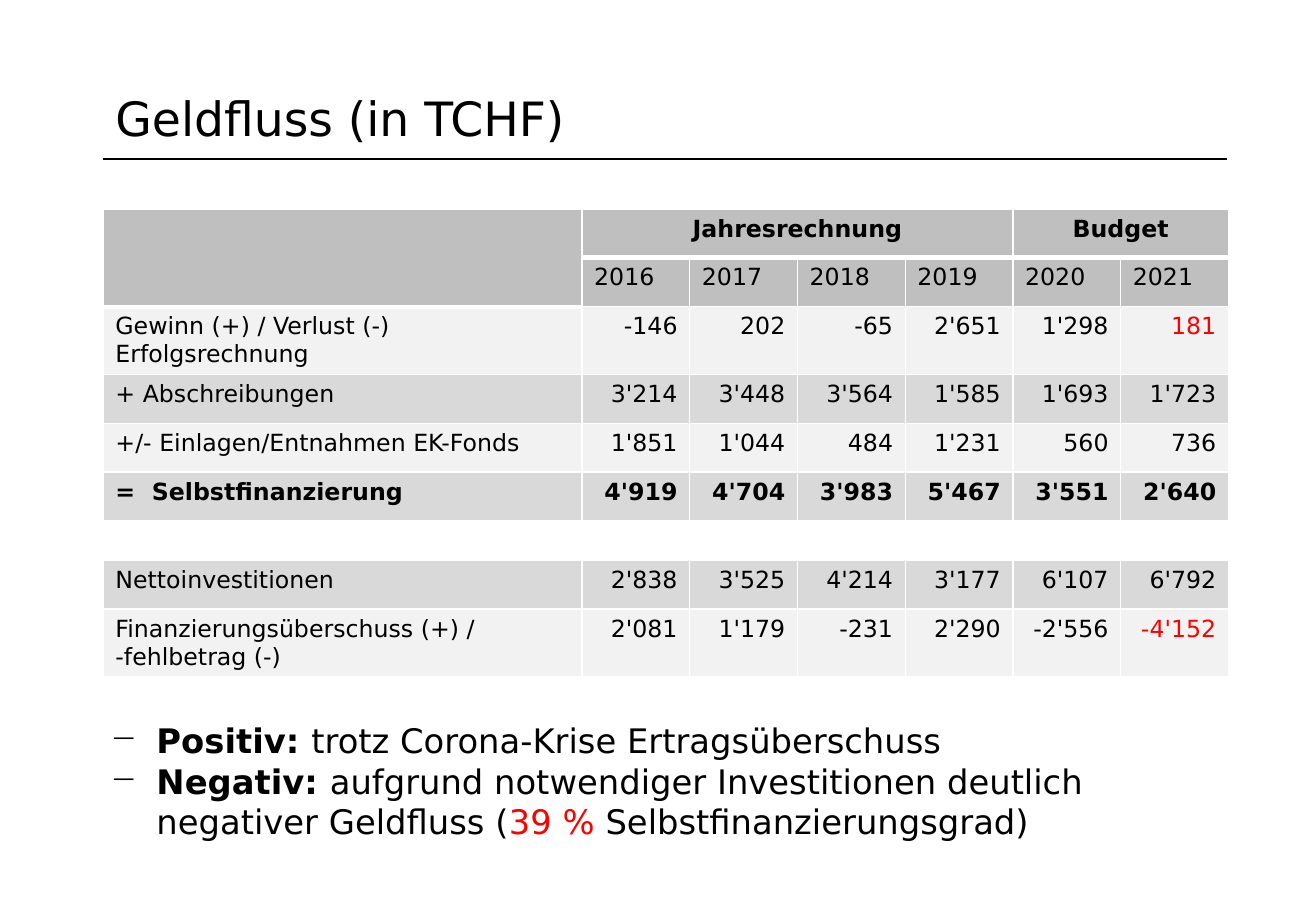
from dataclasses import dataclass

from lxml.etree import SubElement
from pptx import Presentation
from pptx.dml.color import RGBColor
from pptx.enum.shapes import MSO_CONNECTOR
from pptx.enum.text import MSO_ANCHOR, PP_ALIGN as Align
from pptx.oxml.ns import qn
from pptx.util import Inches, Pt


@dataclass(frozen=True)
class Theme:
    font: str = "DejaVu Sans"
    title_size: int = 28
    body_size: int = 20
    table_size: int = 14
    text: str = "000000"
    alert: str = "FF0000"
    white: str = "FFFFFF"
    header: str = "BFBFBF"
    dark_row: str = "D9D9D9"
    light_row: str = "F2F2F2"


THEME = Theme()
LEFT, RIGHT = 0.85, 10.1
TABLE_WIDTH, LABEL_WIDTH = 9.26, 3.94
ROW_HEIGHT, TALL_ROW, SPACER_ROW = 0.4, 0.56, 0.33

YEARS = range(2016, 2022)
HEADER_ROWS = 2
# Label, values, bold, last value in red; None is the spacer row
ROWS = [
    ("Gewinn (+) / Verlust (-) Erfolgsrechnung",
     ["-146", "202", "-65", "2'651", "1'298", "181"], False, True),
    ("+ Abschreibungen",
     ["3'214", "3'448", "3'564", "1'585", "1'693", "1'723"], False, False),
    ("+/- Einlagen/Entnahmen EK-Fonds",
     ["1'851", "1'044", "484", "1'231", "560", "736"], False, False),
    ("=\tSelbstfinanzierung",
     ["4'919", "4'704", "3'983", "5'467", "3'551", "2'640"], True, False),
    None,
    ("Nettoinvestitionen",
     ["2'838", "3'525", "4'214", "3'177", "6'107", "6'792"], False, False),
    ("Finanzierungsüberschuss (+) / -fehlbetrag (-)",
     ["2'081", "1'179", "-231", "2'290", "-2'556", "-4'152"], False, True),
]
TALL_ROWS = {0, 6}

# Spans: text, bold, colour
REMARKS = [
    [("Positiv: ", True, THEME.text),
     ("trotz Corona-Krise Ertragsüberschuss", False, THEME.text)],
    [("Negativ: ", True, THEME.text),
     ("aufgrund notwendiger Investitionen deutlich negativer Geldfluss (",
      False, THEME.text),
     ("39 %", False, THEME.alert),
     (" Selbstfinanzierungsgrad)", False, THEME.text)],
]


def style_font(font, size, color=THEME.text, bold=False):
    font.name = THEME.font
    font.size = Pt(size)
    font.bold = bold
    font.color.rgb = RGBColor.from_string(color)


def add_title(page, text):
    title = page.shapes.title
    title.left, title.top = Inches(LEFT), Inches(0.68)
    title.width, title.height = Inches(6.32), Inches(0.58)
    title.text_frame.text = text
    title.text_frame.vertical_anchor = MSO_ANCHOR.MIDDLE
    para = title.text_frame.paragraphs[0]
    para.alignment = Align.LEFT
    style_font(para.font, THEME.title_size)


def add_rule(page, top):
    """Draw the thin line under the title."""
    rule = page.shapes.add_connector(
        MSO_CONNECTOR.STRAIGHT, Inches(LEFT), Inches(top),
        Inches(RIGHT), Inches(top))
    rule.line.width = Pt(0.75)
    rule.line.color.rgb = RGBColor.from_string(THEME.text)
    SubElement(rule.line._get_or_add_ln().getparent(), qn("a:effectLst"))


def paint_cell(cell, fill, bottom=1):
    """Give a cell white borders and a fill."""
    properties = cell._tc.get_or_add_tcPr()
    for side, width in (("L", 1), ("R", 1), ("T", 1), ("B", bottom)):
        line = SubElement(properties, qn(f"a:ln{side}"), w=str(Pt(width)))
        solid = SubElement(line, qn("a:solidFill"))
        SubElement(solid, qn("a:srgbClr"), val=THEME.white)
    cell.fill.solid()
    cell.fill.fore_color.rgb = RGBColor.from_string(fill)


def write_cell(cell, text, align=Align.LEFT, bold=False, color=THEME.text):
    cell.text = text
    para = cell.text_frame.paragraphs[0]
    para.alignment = align
    if "\t" in text:
        tabs = SubElement(para._p.get_or_add_pPr(), qn("a:tabLst"))
        SubElement(tabs, qn("a:tab"), pos=str(Inches(0.3)), algn="l")
    style_font(para.font, THEME.table_size, color, bold)


def row_height(index):
    if index in TALL_ROWS:
        return TALL_ROW
    return ROW_HEIGHT if ROWS[index] else SPACER_ROW


def fill_header(table):
    for row in range(HEADER_ROWS):
        for column in range(len(YEARS) + 1):
            thick = row == 0 or column == 0
            paint_cell(table.cell(row, column), THEME.header, 3 if thick else 1)
    table.cell(0, 0).merge(table.cell(1, 0))
    for text, first, last in (("Jahresrechnung", 1, 4), ("Budget", 5, 6)):
        table.cell(0, first).merge(table.cell(0, last))
        write_cell(table.cell(0, first), text, Align.CENTER, bold=True)
    for column, year in enumerate(YEARS, 1):
        write_cell(table.cell(1, column), str(year))


def fill_row(cells, content, fill):
    for cell in cells:
        paint_cell(cell, fill if content else THEME.white)
        if not content:
            cell.margin_top = cell.margin_bottom = 0
    if content:
        label, values, bold, alert = content
        write_cell(cells[0], label, bold=bold)
        for column, value in enumerate(values, 1):
            red = alert and column == len(values)
            write_cell(cells[column], value, Align.RIGHT, bold,
                       THEME.alert if red else THEME.text)


def add_cash_flow_table(page):
    heights = [ROW_HEIGHT] * HEADER_ROWS
    heights += [row_height(index) for index in range(len(ROWS))]
    table = page.shapes.add_table(
        len(heights), len(YEARS) + 1, Inches(LEFT), Inches(1.72),
        Inches(TABLE_WIDTH), Inches(sum(heights))).table
    table.first_row = table.horz_banding = False
    year_width = (TABLE_WIDTH - LABEL_WIDTH) / len(YEARS)
    for index, column in enumerate(table.columns):
        column.width = Inches(year_width if index else LABEL_WIDTH)
    for row, height in zip(table.rows, heights):
        row.height = Inches(height)
    fill_header(table)
    for index, content in enumerate(ROWS):
        fill = THEME.dark_row if index % 2 else THEME.light_row
        fill_row(list(table.rows[index + HEADER_ROWS].cells), content, fill)


def add_remarks(page):
    box = page.shapes.add_textbox(
        Inches(0.81), Inches(5.88), Inches(9.26), Inches(1.18))
    frame = box.text_frame
    frame.word_wrap = True
    for index, spans in enumerate(REMARKS):
        para = frame.add_paragraph() if index else frame.paragraphs[0]
        properties = para._p.get_or_add_pPr()
        properties.set("marL", str(Inches(0.38)))
        properties.set("indent", str(-Inches(0.38)))
        SubElement(properties, qn("a:buChar"), char="−")
        for text, bold, color in spans:
            span = para.add_run()
            span.text = text
            style_font(span.font, THEME.body_size, color, bold)


def main():
    deck = Presentation()
    deck.slide_width, deck.slide_height = Inches(10.83), Inches(7.5)
    page = deck.slides.add_slide(deck.slide_layouts.get_by_name("Title Only"))
    add_title(page, "Geldfluss (in TCHF)")
    add_rule(page, 1.31)
    add_cash_flow_table(page)
    add_remarks(page)
    deck.save("out.pptx")


if __name__ == "__main__":
    main()
